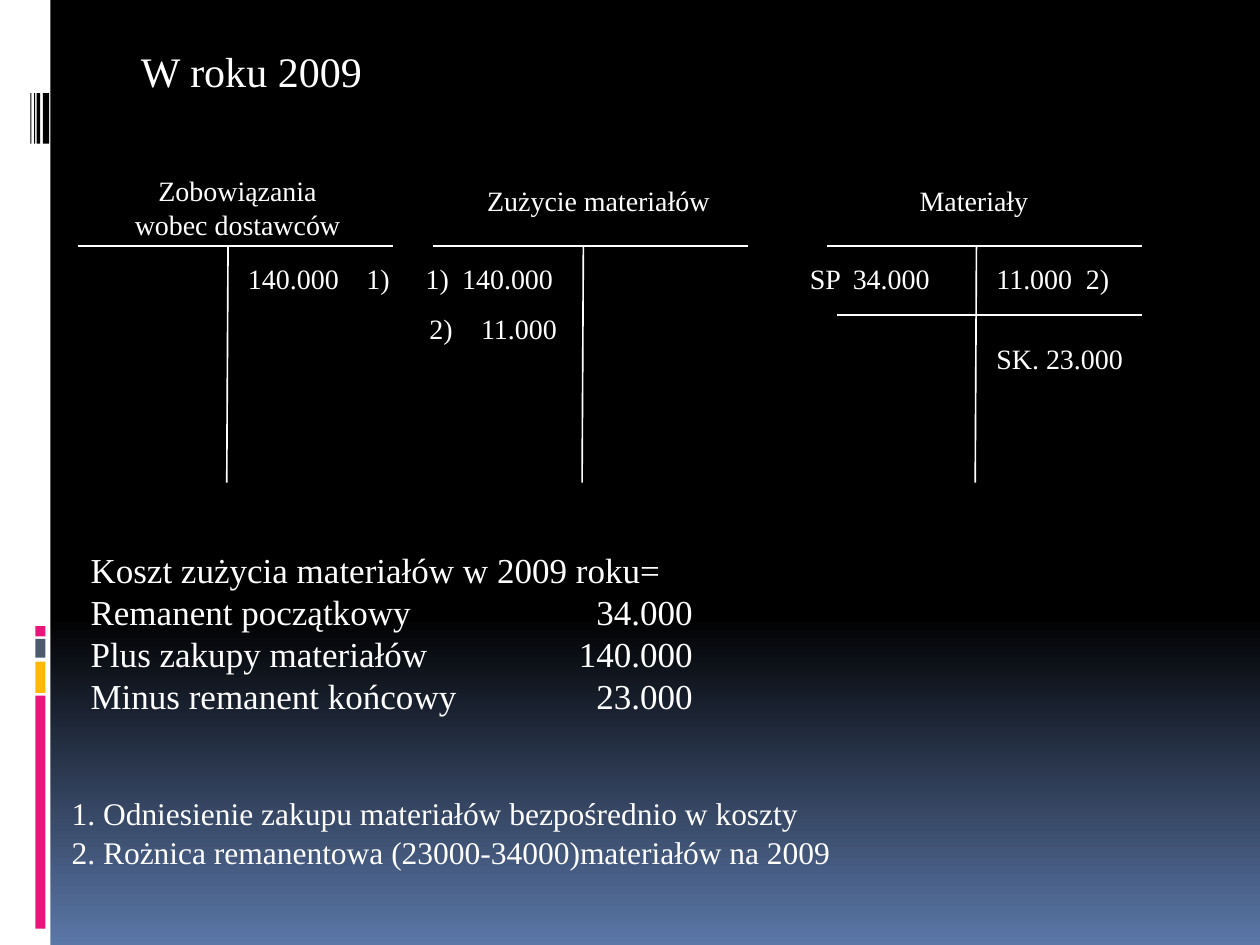
from copy import deepcopy

from lxml import etree
from pptx import Presentation
from pptx.dml.color import RGBColor
from pptx.enum.shapes import MSO_CONNECTOR, MSO_SHAPE
from pptx.enum.text import PP_ALIGN
from pptx.oxml.ns import qn
from pptx.util import Inches, Pt

LINE = MSO_CONNECTOR.STRAIGHT
RECT = MSO_SHAPE.RECTANGLE
LEFT, CENTER = PP_ALIGN.LEFT, PP_ALIGN.CENTER

THEME = {
    "font": "Times New Roman",
    "title": 24, "summary": 20, "note": 18, "account": 16,
    "line": 0.94,
    "white": "FFFFFF", "black": "000000",
    "pink": "EA157A", "yellow": "FEB80A", "slate": "4E5B6F",
    "background": [(0, "000000"), (0.65, "000000"), (1, "5B77A8")],
}

# Side decoration: left, top, width, height, colour
SIDEBAR = [(0, 0, 0.4, 7.5, "white")]
SIDEBAR += [(0.28, top, 0.08, height, color) for top, height, color in [
    (5.52, 1.85, "pink"), (5.25, 0.25, "yellow"),
    (5.07, 0.15, "slate"), (4.97, 0.08, "pink")]]
SIDEBAR += [(left, 0.74, width, 0.4, "black") for left, width in [
    (0.34, 0.05), (0.29, 0.03), (0.27, 0.01), (0.24, 0.01)]]

# T-accounts: left of the bar, then the heading and its box
ACCOUNTS = [
    (0.62, ["Zobowiązania", "wobec dostawców"], (0.94, 1.33, 1.89, 0.64)),
    (3.44, ["Zużycie materiałów"], (3.75, 1.41, 2, 0.37)),
    (6.56, ["Materiały"], (7.19, 1.41, 1.08, 0.37)),
]
BAR_TOP, BAR_WIDTH, STEM_OFFSET, STEM_BOTTOM = 1.95, 2.5, 1.18, 3.83
BALANCE_LINE = (6.64, 2.5, 9.06, 2.5)

# Entries: text, left, top, tab position
ENTRIES = [
    ("140.000\t1)", 1.87, 2.03, 0.94),
    ("1)\t140.000", 3.28, 2.03, 0.29),
    ("2)\t11.000", 3.31, 2.42, 0.41),
    ("SP\t34.000", 6.33, 2.03, 0.34),
    ("11.000\t2)", 7.81, 2.03, 0.71),
    ("SK. 23.000", 7.81, 2.66, None),
]
ENTRY_WIDTH, ENTRY_HEIGHT = 1.4, 0.37

TITLE = "W roku 2009"
SUMMARY = [
    "Koszt zużycia materiałów w 2009 roku=",
    "Remanent początkowy\t34.000",
    "Plus zakupy materiałów\t140.000",
    "Minus remanent końcowy\t23.000",
]
NOTES = [
    "1. Odniesienie zakupu materiałów bezpośrednio w koszty",
    "2. Rożnica remanentowa (23000-34000)materiałów na 2009",
]


def rgb(name):
    return RGBColor.from_string(THEME.get(name, name))


def set_background(s):
    fill = s.background.fill
    fill.gradient()
    fill.gradient_angle = 270
    stops = s.background._cSld.find(".//" + qn("a:gsLst"))
    stops.append(deepcopy(stops[-1]))
    for stop, (position, color) in zip(fill.gradient_stops, THEME["background"]):
        stop.position = position
        stop.color.rgb = rgb(color)


def add_bar(s, left, top, width, height, color):
    sp = s.shapes.add_shape(RECT, *map(Inches, (left, top, width, height)))
    sp.shadow.inherit = False
    sp.fill.solid()
    sp.fill.fore_color.rgb = rgb(color)
    sp.line.fill.background()


def add_line(shapes, x1, y1, x2, y2):
    line = shapes.add_connector(LINE, *map(Inches, (x1, y1, x2, y2)))
    line.line.color.rgb = rgb("white")
    line.line.width = Pt(THEME["line"])
    etree.SubElement(line._element.spPr, qn("a:effectLst"))


def add_text(s, lines, box, size, align=LEFT, tab=None, tab_align="l"):
    """Write one paragraph per line; tab is a stop in inches from the text edge."""
    tf = s.shapes.add_textbox(*map(Inches, box)).text_frame
    tf.word_wrap = True
    for i, text in enumerate(lines):
        p = tf.add_paragraph() if i else tf.paragraphs[0]
        p.alignment = align
        if tab:
            tabs = etree.SubElement(p._p.get_or_add_pPr(), qn("a:tabLst"))
            etree.SubElement(tabs, qn("a:tab"), pos=str(Inches(tab)), algn=tab_align)
        r = p.add_run()
        r.text = text
        r.font.name = THEME["font"]
        r.font.size = Pt(THEME[size])
        r.font.color.rgb = rgb("white")


def add_account(s, left, heading, box):
    shapes = s.shapes.add_group_shape().shapes
    stem = left + STEM_OFFSET
    add_line(shapes, left, BAR_TOP, left + BAR_WIDTH, BAR_TOP)
    add_line(shapes, stem + 0.01, BAR_TOP, stem, STEM_BOTTOM)
    add_text(s, heading, box, "account", align=CENTER)


def main():
    prs = Presentation()
    prs.slide_width, prs.slide_height = Inches(10), Inches(7.5)
    s = prs.slides.add_slide(prs.slide_layouts[6])
    set_background(s)
    for bar in SIDEBAR:
        add_bar(s, *bar)
    for account in ACCOUNTS:
        add_account(s, *account)
    add_line(s.shapes, *BALANCE_LINE)
    for text, left, top, tab in ENTRIES:
        add_text(s, [text], (left, top, ENTRY_WIDTH, ENTRY_HEIGHT), "account", tab=tab)
    add_text(s, [TITLE], (1.02, 0.31, 7.47, 0.5), "title")
    add_text(s, SUMMARY, (0.62, 4.3, 5.25, 1.45), "summary", tab=4.78, tab_align="r")
    for i, note in enumerate(NOTES):
        add_text(s, [note], (0.47, 6.25 + 0.31 * i, 6.4, 0.4), "note")
    prs.save("out.pptx")


if __name__ == "__main__":
    main()
